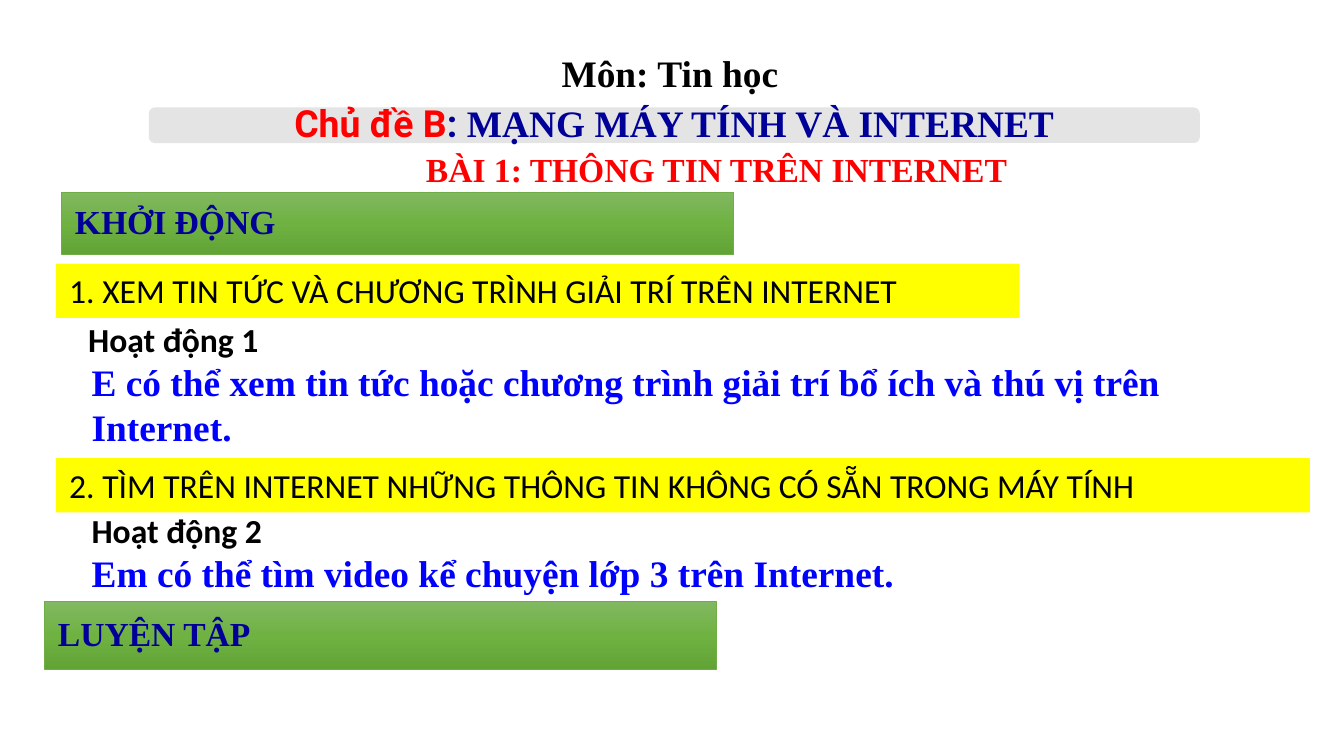
from copy import deepcopy
from dataclasses import dataclass

import pptx
import pptx.dml.color
import pptx.enum.shapes
import pptx.enum.text
import pptx.oxml
import pptx.oxml.ns
import pptx.util

WIDTH = pptx.util.Inches(10)
HEIGHT = WIDTH * 9 // 16
COLORS = {
    "black": "000000", "red": "FF0000", "blue": "0000FF", "navy": "000099",
    "yellow": "FFFF00", "gray": "D9D9D9", "green": "70AD47",
}
GREEN_STOPS = ("81B861", "6FB242", "62A336")
SERIF, SANS, TOPIC_FONT = "Times New Roman", "Calibri", "Roboto"
SHAPES = pptx.enum.shapes.MSO_SHAPE
ANCHOR = pptx.enum.text.MSO_ANCHOR
FIT = pptx.enum.text.MSO_AUTO_SIZE
LEFT, CENTER = pptx.enum.text.PP_ALIGN.LEFT, pptx.enum.text.PP_ALIGN.CENTER


@dataclass(frozen=True)
class Area:
    """Position and size in percent of the slide's width and height."""
    left: float
    top: float
    width: float
    height: float

    def emu(self) -> tuple[int, int, int, int]:
        return (int(WIDTH * self.left / 100), int(HEIGHT * self.top / 100),
                int(WIDTH * self.width / 100), int(HEIGHT * self.height / 100))


@dataclass(frozen=True)
class Style:
    size: int
    font: str
    color: str
    bold: bool = True
    align: int = LEFT
    wrap: bool = True


@dataclass(frozen=True)
class Line:
    text: str
    area: Area
    style: Style


SUBJECT = Style(20, SERIF, "black", align=CENTER)
LESSON = Style(18, SERIF, "red", align=CENTER)
SECTION = Style(18, SANS, "black", bold=False)
ACTIVITY = Style(18, SANS, "black", wrap=False)
ANSWER = Style(20, SERIF, "blue")
STAGE = Style(18, SERIF, "navy")

SECTIONS = (
    Line("1. XEM TIN TỨC VÀ CHƯƠNG TRÌNH GIẢI TRÍ TRÊN INTERNET",
         Area(4.17, 34.87, 71.7, 7.18), SECTION),
    Line("2. TÌM TRÊN INTERNET NHỮNG THÔNG TIN KHÔNG CÓ SẴN TRONG MÁY TÍNH",
         Area(4.17, 60.62, 93.3, 7.18), SECTION),
)
PLAIN_LINES = (
    Line("Môn: Tin học", Area(33.15, 5.8, 33.4, 7.78), SUBJECT),
    Line("BÀI 1: THÔNG TIN TRÊN INTERNET", Area(15.83, 18.84, 75, 7.18), LESSON),
    Line("Hoạt động 1", Area(5.57, 41.36, 16.5, 7.18), ACTIVITY),
    Line("E có thể xem tin tức hoặc chương trình giải trí bổ ích và thú vị trên Internet.",
         Area(5.83, 46.66, 91.7, 13.7), ANSWER),
    Line("Hoạt động 2", Area(5.83, 66.58, 16.6, 7.18), ACTIVITY),
    Line("Em có thể tìm video kể chuyện lớp 3 trên Internet.",
         Area(5.83, 71.9, 85.8, 7.78), ANSWER),
)
STAGES = (
    Line("KHỞI ĐỘNG", Area(4.6, 25.42, 50, 8.25), STAGE),
    Line("LUYỆN TẬP", Area(3.33, 79.6, 50, 8.97), STAGE),
)
TOPIC_AREA = Area(11.07, 14.22, 78.2, 4.7)
TOPIC_RUNS = (
    ("Chủ đề B", TOPIC_FONT, "red"),
    (": ", TOPIC_FONT, "navy"),
    ("MẠNG MÁY TÍNH VÀ INTERNET", SERIF, "navy"),
)


def rgb(name: str) -> pptx.dml.color.RGBColor:
    return pptx.dml.color.RGBColor.from_string(COLORS[name])


def write(shape, line: Line) -> None:
    frame = shape.text_frame
    frame.word_wrap = line.style.wrap
    frame.auto_size = FIT.SHAPE_TO_FIT_TEXT
    frame.vertical_anchor = ANCHOR.TOP
    paragraph = frame.paragraphs[0]
    paragraph.text = line.text
    paragraph.alignment = line.style.align
    font = paragraph.font
    font.size = pptx.util.Pt(line.style.size)
    font.name = line.style.font
    font.bold = line.style.bold
    font.color.rgb = rgb(line.style.color)


def add_panel(slide, kind, area: Area):
    panel = slide.shapes.add_shape(kind, *area.emu())
    panel.shadow.inherit = False
    panel.line.fill.background()
    return panel


def add_plain_line(slide, line: Line) -> None:
    write(slide.shapes.add_textbox(*line.area.emu()), line)


def add_section(slide, line: Line) -> None:
    bar = add_panel(slide, SHAPES.RECTANGLE, line.area)
    bar.fill.solid()
    bar.fill.fore_color.rgb = rgb("yellow")
    write(bar, line)


def fill_green(shape) -> None:
    """Fill from top to bottom with evenly spaced green stops."""
    shape.fill.gradient()
    shape.fill.gradient_angle = 270
    stop_list = shape.fill.gradient_stops[0]._gs.getparent()
    stop_list.insert(1, deepcopy(stop_list[0]))
    for index, color in enumerate(GREEN_STOPS):
        stop = shape.fill.gradient_stops[index]
        stop.position = index / (len(GREEN_STOPS) - 1)
        stop.color.rgb = pptx.dml.color.RGBColor.from_string(color)


def add_stage(slide, line: Line) -> None:
    banner = add_panel(slide, SHAPES.RECTANGLE, line.area)
    fill_green(banner)
    banner.line.color.rgb = rgb("green")
    banner.line.width = pptx.util.Pt(0.5)
    write(banner, line)
    banner.text_frame.auto_size = FIT.NONE
    banner.text_frame.vertical_anchor = ANCHOR.MIDDLE
    banner.text_frame.paragraphs[0].line_spacing = 0.9


def add_topic(slide) -> None:
    band = add_panel(slide, SHAPES.ROUNDED_RECTANGLE, TOPIC_AREA)
    band.fill.solid()
    band.fill.fore_color.rgb = rgb("gray")
    gray = band.fill._xPr.find(".//" + pptx.oxml.ns.qn("a:srgbClr"))
    gray.append(pptx.oxml.parse_xml(
        f'<a:alpha {pptx.oxml.ns.nsdecls("a")} val="70000"/>'))
    band.text_frame.word_wrap = True
    band.text_frame.vertical_anchor = ANCHOR.MIDDLE
    title = band.text_frame.paragraphs[0]
    title.alignment = CENTER
    title.line_spacing = 0.9
    title.font.size = pptx.util.Pt(20)
    title.font.bold = True
    for text, font, color in TOPIC_RUNS:
        part = title.add_run()
        part.text = text
        part.font.name = font
        part.font.color.rgb = rgb(color)


def main() -> None:
    deck = pptx.Presentation()
    deck.slide_width, deck.slide_height = WIDTH, HEIGHT
    slide = deck.slides.add_slide(deck.slide_layouts[6])
    for section in SECTIONS:
        add_section(slide, section)
    add_topic(slide)
    for line in PLAIN_LINES:
        add_plain_line(slide, line)
    for stage in STAGES:
        add_stage(slide, stage)
    deck.save("out.pptx")


if __name__ == "__main__":
    main()
